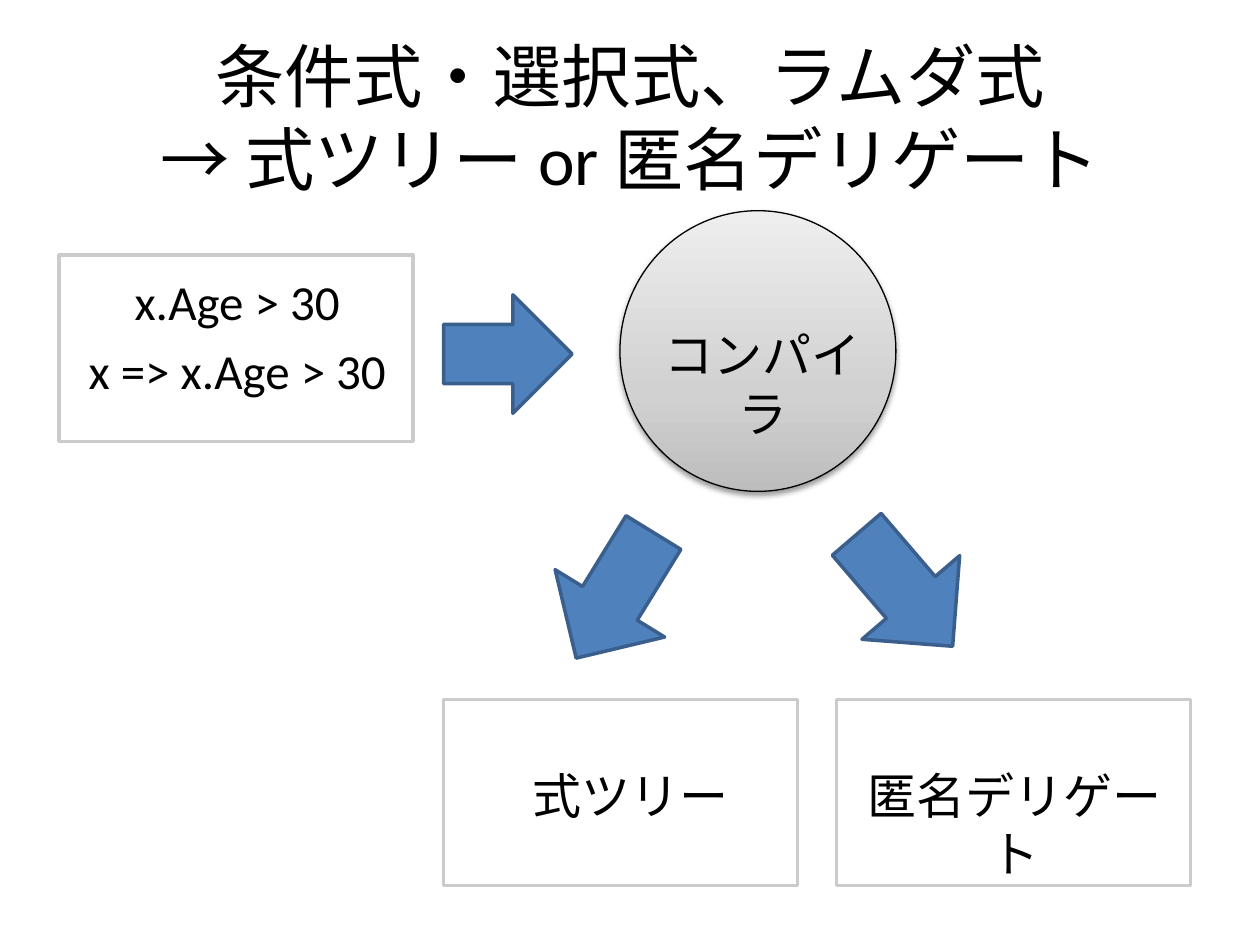
from lxml import etree
from pptx import Presentation
from pptx import util as u
from pptx.dml.color import RGBColor
from pptx.enum import shapes, text
from pptx.oxml import ns

FONT = "Calibri"
BLACK, WHITE, GREY = "000000", "FFFFFF", "CBCBCB"
BLUE, DARK_BLUE = "4F81BD", "3A5F8C"
SPHERE = ((0, "BDBDBD"), (35, "D1D1D1"), (100, "EEEEEE"))
W, H = 10, 7.5
BOX_W, BOX_H = W * 0.281, H * 0.197
LINE_H = H * 0.076
OUTPUT_TOP = H * 0.74
MST = shapes.MSO_SHAPE


def color(value):
    return RGBColor.from_string(value)


def inches(box):
    return [u.Inches(v) for v in box]


def write(tf, content, size=28, fill=BLACK, anchor=text.MSO_ANCHOR.TOP):
    tf.word_wrap = True
    tf.auto_size = text.MSO_AUTO_SIZE.NONE
    tf.vertical_anchor = anchor
    p = tf.paragraphs[0]
    p.text = content
    p.alignment = text.PP_ALIGN.CENTER
    for r in p.runs:
        r.font.size = u.Pt(size)
        r.font.name = FONT
        r.font.color.rgb = color(fill)


def add_label(slide, box, content):
    tb = slide.shapes.add_textbox(*inches(box))
    write(tb.text_frame, content)


def add_figure(slide, kind, box, fill, line, width=2, rotation=0):
    sp = slide.shapes.add_shape(kind, *inches(box))
    sp.shadow.inherit = False
    sp.rotation = rotation
    sp.fill.solid()
    sp.fill.fore_color.rgb = color(fill)
    sp.line.color.rgb = color(line)
    sp.line.width = u.Pt(width)
    return sp


def add_color(parent, value):
    return etree.SubElement(parent, ns.qn("a:srgbClr"), val=value)


def shade_sphere(sp):
    sp.fill.gradient()
    sp.fill.gradient_angle = 90
    stops = sp._element.spPr.find(".//" + ns.qn("a:gsLst"))
    for stop in list(stops):
        stops.remove(stop)
    for position, value in SPHERE:
        stop = etree.SubElement(stops, ns.qn("a:gs"), pos=str(position * 1000))
        add_color(stop, value)
    effects = sp._element.spPr.find(ns.qn("a:effectLst"))
    shadow = etree.SubElement(
        effects, ns.qn("a:outerShdw"), blurRad=str(u.Pt(3.1)),
        dist=str(u.Pt(1.6)), dir="5400000", rotWithShape="0")
    etree.SubElement(add_color(shadow, BLACK), ns.qn("a:alpha"), val="38000")


def add_title(slide, box, content):
    title = slide.shapes.title
    title.left, title.top, title.width, title.height = inches(box)
    write(title.text_frame, content, size=39.6, anchor=text.MSO_ANCHOR.MIDDLE)


def add_card(slide, box, lines, first, inset=0.03):
    x, y, w, h = box
    add_figure(slide, MST.RECTANGLE, box, WHITE, GREY)
    for i, content in enumerate(lines):
        add_label(slide, (x + w * inset, y + h * first + i * 0.55,
                          w * 0.945, LINE_H), content)


def add_compiler(slide, box):
    x, y, w, h = box
    shade_sphere(add_figure(slide, MST.OVAL, box, WHITE, BLACK, 0.75))
    add_label(slide, (x + w * 0.035, y + h * 0.385, w * 0.965, LINE_H), "コンパイラ")


def add_arrows(slide):
    for kind, box, rotation in (
            (MST.RIGHT_ARROW, (3.52, 2.34, 1.02, 0.94), 0),
            (MST.DOWN_ARROW, (4.37, 4.14, 1.02, 1.17), 31.6),
            (MST.DOWN_ARROW, (6.67, 4.1, 1.02, 1.17), 319.4)):
        add_figure(slide, kind, box, BLUE, DARK_BLUE, rotation=rotation)


def main():
    prs = Presentation()
    prs.slide_width, prs.slide_height = u.Inches(W), u.Inches(H)
    slide = prs.slides.add_slide(prs.slide_layouts[5])
    add_title(slide, (W * 0.05, H * 0.04, W * 0.9, H / 6),
              "条件式・選択式、ラムダ式\v→ 式ツリー or 匿名デリゲート")
    add_card(slide, (W * 0.047, H * 0.27, BOX_W, BOX_H),
             ("x.Age > 30", "x => x.Age > 30"), first=0.055)
    add_compiler(slide, (W * 0.492, H * 0.223, W * 0.219, H * 0.297))
    add_card(slide, (W * 0.664, OUTPUT_TOP, BOX_W, BOX_H),
             ("匿名デリゲート",), first=0.32)
    add_card(slide, (W * 0.352, OUTPUT_TOP, BOX_W, BOX_H),
             ("式ツリー",), first=0.32, inset=0.055)
    add_arrows(slide)
    prs.save("out.pptx")


if __name__ == "__main__":
    main()
